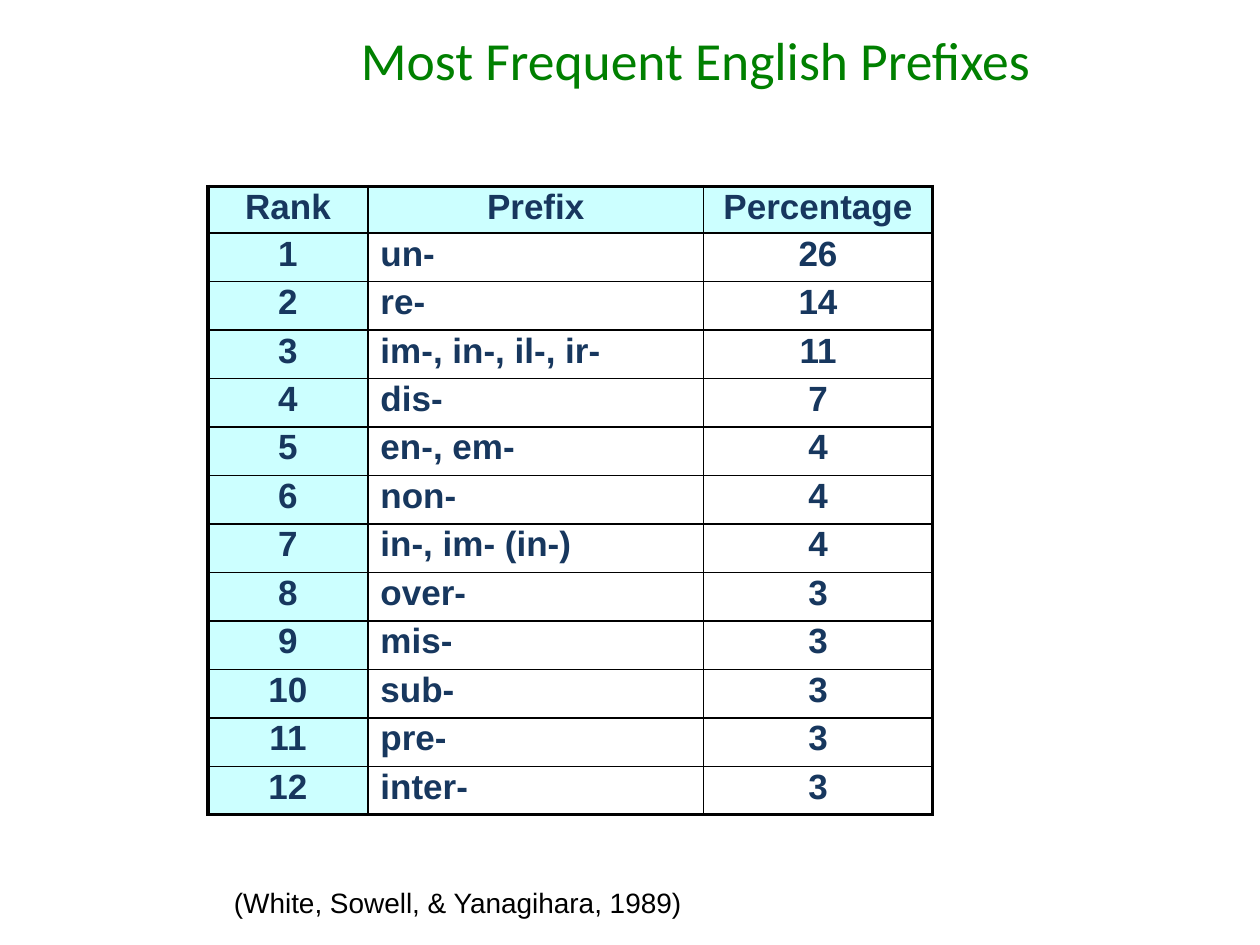
from dataclasses import dataclass

from lxml import etree
from pptx import Presentation
from pptx import util as u
from pptx.dml.color import RGBColor
from pptx.enum import text
from pptx.oxml.ns import qn

HUES = {"title": "008000", "ink": "17375E", "head": "CCFFFF", "line": "000000"}
ALIGN = text.PP_ALIGN
THIN, THICK = 1, 2.25
HEADS = ("Rank", "Prefix", "Percentage")
WIDTHS = (3.23, 6.76, 4.62)
TOP_ROW, HEIGHT = 0.94, 12.67
DATA = (
    ("un-", 26), ("re-", 14), ("im-, in-, il-, ir-", 11), ("dis-", 7),
    ("en-, em-", 4), ("non-", 4), ("in-, im- (in-)", 4), ("over-", 3),
    ("mis-", 3), ("sub-", 3), ("pre-", 3), ("inter-", 3),
)


@dataclass
class Label:
    words: str
    box: tuple
    font: str
    size: float
    hue: str
    align: ALIGN


LABELS = (
    Label("Most Frequent English Prefixes", (1.32, -0.08, 25.4, 2.54),
          "Calibri", 30.6, "title", ALIGN.CENTER),
    Label("(White, Sowell, & Yanagihara, 1989)", (-0.64, 17.73, 14.63, 0.94),
          "Arial", 16, "line", ALIGN.RIGHT),
)


def style(para, font: str, size: float, hue: str, align, bold: bool = False) -> None:
    para.alignment = align
    look = {"name": font, "size": u.Pt(size), "bold": bold}
    for key, value in look.items():
        setattr(para.font, key, value)
    para.font.color.rgb = RGBColor.from_string(HUES[hue])


def draw_label(slide, label: Label) -> None:
    frame = slide.shapes.add_textbox(*map(u.Cm, label.box)).text_frame
    frame.word_wrap = True
    frame.vertical_anchor = text.MSO_ANCHOR.MIDDLE
    para = frame.paragraphs[0]
    para.text = label.words
    style(para, label.font, label.size, label.hue, label.align)


def edge(cell, side: str, width: float) -> None:
    props = cell._tc.get_or_add_tcPr()
    line = etree.SubElement(props, qn(f"a:ln{side}"), w=str(u.Pt(width)))
    fill = etree.SubElement(line, qn("a:solidFill"))
    etree.SubElement(fill, qn("a:srgbClr"), val=HUES["line"])


def draw_cell(cell, words: str, left: bool, shade: bool, outer: dict) -> None:
    cell.text = words
    pads = {"margin_left": 0.25, "margin_right": 0.25,
            "margin_top": 0.13, "margin_bottom": 0.13}
    for key, value in pads.items():
        setattr(cell, key, u.Cm(value))
    para = cell.text_frame.paragraphs[0]
    style(para, "Arial", 20, "ink", ALIGN.LEFT if left else ALIGN.CENTER, True)
    para.line_spacing = 0.85
    for side, rim in outer.items():
        edge(cell, side, THICK if rim else THIN)
    if shade:
        cell.fill.solid()
        cell.fill.fore_color.rgb = RGBColor.from_string(HUES["head"])
    else:
        cell.fill.background()


def draw_table(slide) -> None:
    rows = [HEADS] + [(n, *pair) for n, pair in enumerate(DATA, 1)]
    box = (4.19, 3.76, sum(WIDTHS), HEIGHT)
    grid = slide.shapes.add_table(len(rows), len(HEADS), *map(u.Cm, box)).table
    for key in ("first_row", "horz_banding"):
        setattr(grid, key, False)
    for col, width in zip(grid.columns, WIDTHS):
        col.width = u.Cm(width)
    for r, row in enumerate(rows):
        grid.rows[r].height = u.Cm((HEIGHT - TOP_ROW) / len(DATA) if r else TOP_ROW)
        for c, value in enumerate(row):
            outer = {"L": c == 0, "R": c == len(HEADS) - 1,
                     "T": r == 0, "B": r == len(DATA)}
            draw_cell(grid.cell(r, c), str(value), r > 0 and c == 1,
                      r == 0 or c == 0, outer)


def main() -> None:
    deck = Presentation()
    deck.slide_width, deck.slide_height = u.Cm(25.4), u.Cm(19.05)
    slide = deck.slides.add_slide(deck.slide_layouts[6])
    draw_table(slide)
    for label in LABELS:
        draw_label(slide, label)
    deck.save("out.pptx")


if __name__ == "__main__":
    main()
